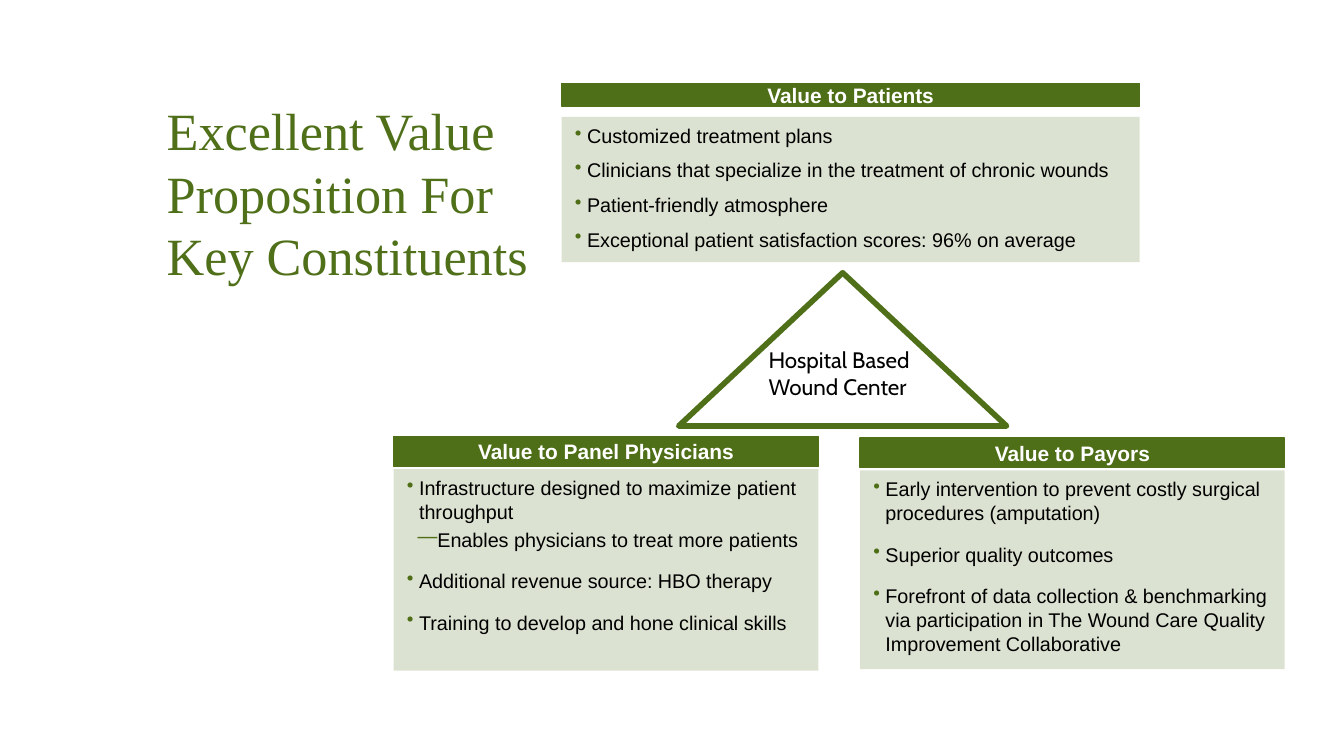
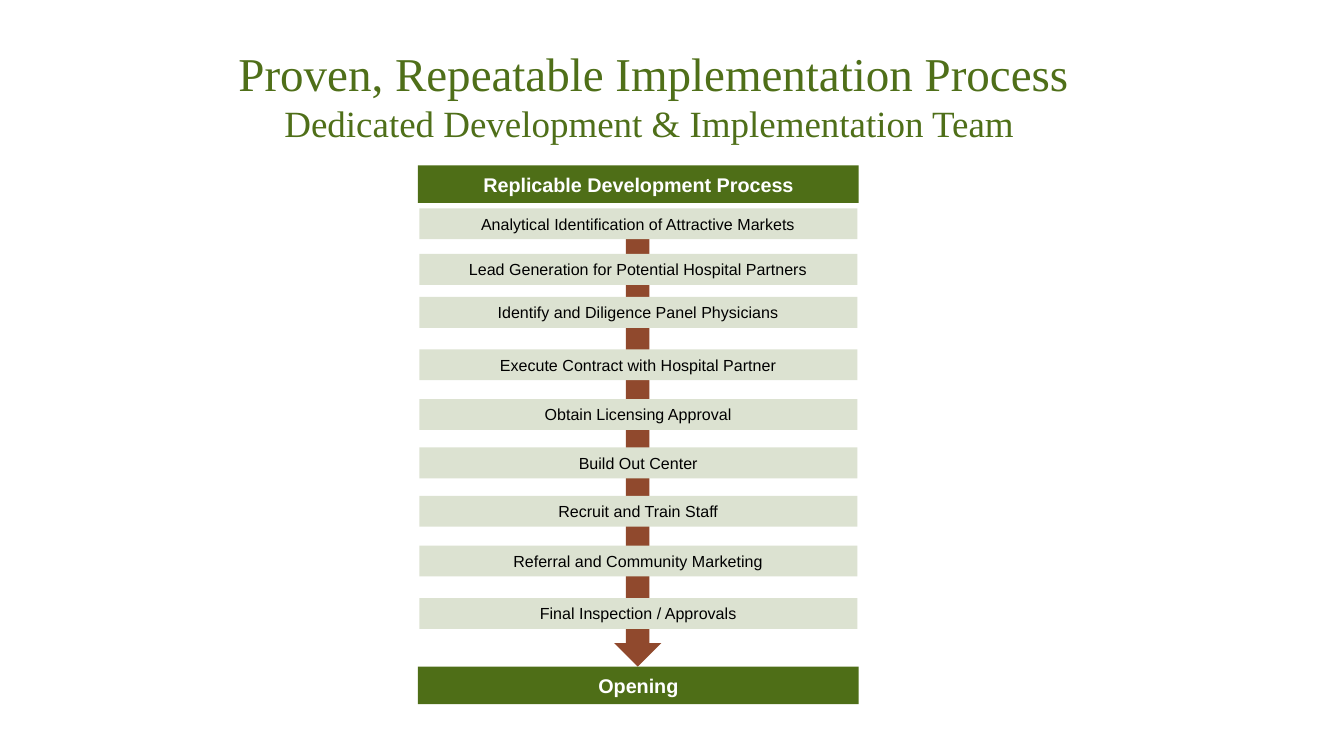
"""Build two slides on the value and the rollout of a hospital wound center."""
from dataclasses import dataclass

from lxml import etree
from pptx import Presentation
from pptx.dml.color import RGBColor
from pptx.enum.shapes import MSO_SHAPE
from pptx.enum.text import MSO_ANCHOR, PP_ALIGN
from pptx.oxml.ns import qn
from pptx.util import Inches, Pt

RECTANGLE = MSO_SHAPE.RECTANGLE
TRIANGLE = MSO_SHAPE.ISOSCELES_TRIANGLE
DOWN_ARROW = MSO_SHAPE.DOWN_ARROW
TOP, MIDDLE, BOTTOM = MSO_ANCHOR.TOP, MSO_ANCHOR.MIDDLE, MSO_ANCHOR.BOTTOM
LEFT, CENTER = PP_ALIGN.LEFT, PP_ALIGN.CENTER


@dataclass(frozen=True)
class Theme:
    title: str = "4F6F19"
    band: str = "4E6E17"
    panel: str = "DCE2D1"
    arrow: str = "90492D"
    ink: str = "000000"
    paper: str = "FFFFFF"
    title_font: str = "Times New Roman"
    body_font: str = "Arial"
    label_font: str = "Cabin"
    title_size: float = 28
    process_title_size: float = 25.2
    subtitle_size: float = 19.8
    label_size: float = 12
    header_size: float = 11.2
    body_size: float = 10.6
    step_size: float = 8.6


theme = Theme()
CELL = Inches(0.1)


def add_block(page, kind, area, fill=None, line=None, weight=0.75, anchor=MIDDLE):
    """Place a shape, or a text box when kind is None, on the grid."""
    place = [round(CELL * cells) for cells in area]
    if kind is None:
        box = page.shapes.add_textbox(*place)
    else:
        box = page.shapes.add_shape(kind, *place)
        box.shadow.inherit = False
        if fill:
            box.fill.solid()
            box.fill.fore_color.rgb = RGBColor.from_string(fill)
        else:
            box.fill.background()
        if line:
            box.line.color.rgb = RGBColor.from_string(line)
            box.line.width = Pt(weight)
        else:
            box.line.fill.background()
    frame = box.text_frame
    frame.word_wrap = True
    frame.vertical_anchor = anchor
    frame.margin_left = frame.margin_right = Inches(0.09 if anchor == BOTTOM else 0.1)
    frame.margin_top = frame.margin_bottom = Inches(0.05 if anchor == TOP else 0.04)
    return box


def write_line(box, text, size, color, font=theme.body_font, bold=False,
               align=CENTER, bullet=None, indent=(0, 0)):
    """Write one paragraph, filling the empty first one before adding more."""
    frame = box.text_frame
    first = frame.paragraphs[0]
    para = frame.add_paragraph() if first.runs else first
    para.alignment = align
    para.add_run().text = text
    if bullet:
        settings = para._p.get_or_add_pPr()
        settings.set("marL", str(Inches(indent[0])))
        settings.set("indent", str(Inches(indent[1])))
        tint = etree.SubElement(settings, qn("a:buClr"))
        etree.SubElement(tint, qn("a:srgbClr")).set("val", theme.band)
        etree.SubElement(settings, qn("a:buChar")).set("char", bullet)
    para.font.size = Pt(size)
    para.font.name = font
    para.font.bold = bold
    para.font.color.rgb = RGBColor.from_string(color)
    return para


deck = Presentation()
deck.slide_width = Inches(10)
deck.slide_height = deck.slide_width * 9 // 16
blank = deck.slide_layouts[6]

page = deck.slides.add_slide(blank)
title = add_block(page, None, (11.5, 6.2, 29.8, 15.5), anchor=BOTTOM)
write_line(title, "Excellent Value Proposition For Key Constituents", theme.title_size,
           theme.title, theme.title_font, align=LEFT)

panels = [
    ("Value to Patients", (41.8, 6.2, 43, 1.7), (8.7, 10.8), 5.8,
     [(0, "Customized treatment plans"),
      (0, "Clinicians that specialize in the treatment of chronic wounds"),
      (0, "Patient-friendly atmosphere"),
      (0, "Exceptional patient satisfaction scores: 96% on average")]),
    ("Value to Panel Physicians", (29.3, 32.5, 31.6, 2.2), (34.9, 15), 9.5,
     [(0, "Infrastructure designed to maximize patient throughput"),
      (1, "Enables physicians to treat more patients"),
      (0, "Additional revenue source: HBO therapy"),
      (0, "Training to develop and hone clinical skills")]),
    ("Value to Payors", (64, 32.6, 31.6, 2.2), (35, 14.8), 9.5,
     [(0, "Early intervention to prevent costly surgical procedures (amputation)"),
      (0, "Superior quality outcomes"),
      (0, "Forefront of data collection & benchmarking via participation in "
          "The Wound Care Quality Improvement Collaborative")]),
]
bullets = [("•", (0.09, -0.09)), ("―", (0.21, -0.13))]
for heading, header_area, (body_top, body_height), gap, items in panels:
    header = add_block(page, RECTANGLE, header_area, theme.band, theme.title)
    header.text_frame.margin_top = header.text_frame.margin_bottom = 0
    write_line(header, heading, theme.header_size, theme.paper, bold=True)
    left, _, width, _ = header_area
    body = add_block(page, RECTANGLE, (left, body_top, width, body_height),
                     theme.panel, anchor=TOP)
    for number, (level, text) in enumerate(items):
        bullet, indent = bullets[level]
        para = write_line(body, text, theme.body_size, theme.ink, align=LEFT,
                          bullet=bullet, indent=indent)
        para.level = level
        if number:
            para.space_before = Pt(2.2 if level else gap)

add_block(page, TRIANGLE, (50.5, 20.3, 24.4, 11.4), line=theme.title, weight=3)
label = add_block(page, None, (56.2, 25.3, 14.3, 5), anchor=TOP)
write_line(label, "Hospital Based Wound Center", theme.label_size, theme.ink,
           theme.label_font, align=LEFT)

page = deck.slides.add_slide(blank)
title = add_block(page, None, (4.3, 4.4, 88.7, 6.8), anchor=BOTTOM)
para = write_line(title, "Proven, Repeatable Implementation Process",
                  theme.process_title_size, theme.title, theme.title_font)
para.add_line_break()
span = para.add_run()
span.text = "Dedicated Development & Implementation Team "
span.font.size = Pt(theme.subtitle_size)

add_block(page, DOWN_ARROW, (45.7, 17.7, 3.5, 31.9), theme.arrow)
for text, top in [("Replicable Development Process", 12.3), ("Opening", 49.6)]:
    band = add_block(page, RECTANGLE, (31.1, top, 32.8, 2.8), theme.band)
    write_line(band, text, theme.body_size, theme.paper, bold=True)

steps = [
    ("Analytical Identification of Attractive Markets", 15.5),
    ("Lead Generation for Potential Hospital Partners", 18.9),
    ("Identify and Diligence Panel Physicians", 22.1),
    ("Execute Contract with Hospital Partner", 26),
    ("Obtain Licensing Approval", 29.7),
    ("Build Out Center", 33.3),
    ("Recruit and Train Staff", 36.9),
    ("Referral and Community Marketing", 40.6),
    ("Final Inspection / Approvals", 44.5),
]
for text, top in steps:
    step = add_block(page, RECTANGLE, (31.2, top, 32.6, 2.3), theme.panel)
    write_line(step, text, theme.step_size, theme.ink)

deck.save("out.pptx")
